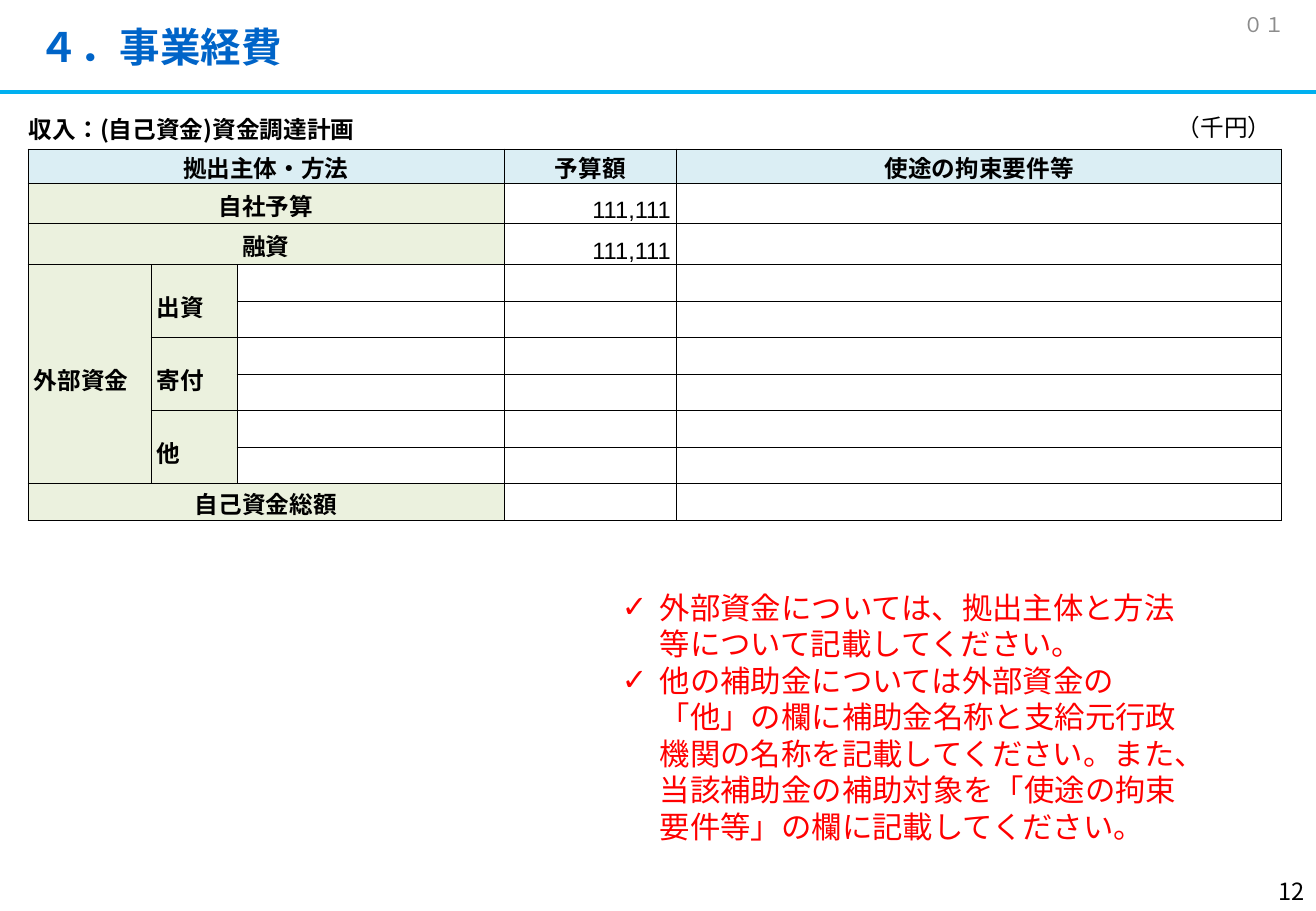
from dataclasses import dataclass

from lxml import etree
from pptx import Presentation
from pptx.dml.color import RGBColor
from pptx.enum.lang import MSO_LANGUAGE_ID
from pptx.enum.shapes import MSO_CONNECTOR
from pptx.enum.text import MSO_ANCHOR, PP_ALIGN
from pptx.oxml import parse_xml
from pptx.oxml.ns import nsdecls, qn
from pptx.util import Pt

LEFT, CENTER, RIGHT, JUSTIFY = PP_ALIGN.LEFT, PP_ALIGN.CENTER, PP_ALIGN.RIGHT, PP_ALIGN.JUSTIFY
TOP, MIDDLE = MSO_ANCHOR.TOP, MSO_ANCHOR.MIDDLE
JAPANESE = MSO_LANGUAGE_ID.JAPANESE
STRAIGHT = MSO_CONNECTOR.STRAIGHT
PX = 7526


@dataclass(frozen=True)
class Theme:
    title: str = "0064C8"
    rule: str = "00B0F0"
    ink: str = "000000"
    muted: str = "8C8C8C"
    alert: str = "FF0000"
    header: str = "DBEEF4"
    label: str = "EBF1DE"
    paper: str = "FFFFFF"
    font: str = "Noto Sans CJK JP"
    table_font: str = "Arial"
    title_size: int = 24
    note_size: int = 18
    body_size: int = 14
    small_size: int = 12


theme = Theme()


def add_span(para, text, size, color, bold=False, font=theme.font):
    span = para.add_run()
    span.text = text
    span.font.size = Pt(size)
    span.font.bold = bold
    span.font.color.rgb = RGBColor.from_string(color)
    span.font.name = font
    span.font.language_id = JAPANESE
    east_asian = etree.SubElement(span.font._element, qn("a:ea"))
    east_asian.set("typeface", font)


def add_box(left, top, width, height, anchor=TOP):
    box = page.shapes.add_textbox(left * PX, top * PX, width * PX, height * PX)
    box.text_frame.word_wrap = True
    box.text_frame.vertical_anchor = anchor
    return box.text_frame


deck = Presentation()
deck.slide_width, deck.slide_height = 1316 * PX, 911 * PX
page = deck.slides.add_slide(deck.slide_layouts[6])

# Rule under the title
rule = page.shapes.add_connector(STRAIGHT, 0, 92 * PX, 1316 * PX, 92 * PX)
rule.line.color.rgb = RGBColor.from_string(theme.rule)
rule.line.width = Pt(2.25)
etree.SubElement(rule._element.spPr, qn("a:effectLst"))

# Single-line texts: place, anchor, alignment, wording, size, colour, bold
lines = [
    ((27, 16, 1264, 61), MIDDLE, LEFT, "４．事業経費", theme.title_size, theme.title, True),
    ((17, 109, 452, 41), TOP, LEFT, "収入：(自己資金)資金調達計画", theme.body_size, theme.ink, True),
    ((1165, 107, 137, 41), TOP, LEFT, "（千円）", theme.body_size, theme.ink, False),
    ((1232, 0, 84, 49), MIDDLE, LEFT, "０１", theme.small_size, theme.muted, False),
    ((1011, 867, 306, 49), MIDDLE, RIGHT, "12", theme.body_size, theme.ink, False),
]
for place, anchor, align, text, size, color, bold in lines:
    para = add_box(*place, anchor).paragraphs[0]
    para.alignment = align
    add_span(para, text, size, color, bold)

# Funding table
column_widths = [123, 86, 267, 173, 605]
row_heights = [34, 40, 41, 34, 35, 34, 35, 34, 35, 34]
frame = page.shapes.add_table(len(row_heights), len(column_widths), 28 * PX, 149 * PX,
                              sum(column_widths) * PX, sum(row_heights) * PX)
table = frame.table
table.first_row = table.horz_banding = False
for column, width in zip(table.columns, column_widths):
    column.width = width * PX
for row, height in zip(table.rows, row_heights):
    row.height = height * PX

# (row, column): wording, alignment, line pitch in points, fill, bold
entries = {
    (0, 0): ("拠出主体・方法", CENTER, 20, theme.header, True),
    (0, 3): ("予算額", CENTER, 20, theme.header, True),
    (0, 4): ("使途の拘束要件等", CENTER, 20, theme.header, True),
    (1, 0): ("自社予算", CENTER, 20, theme.label, True),
    (1, 3): ("111,111", RIGHT, 24, theme.paper, False),
    (2, 0): ("融資", CENTER, 20, theme.label, True),
    (2, 3): ("111,111", RIGHT, 24, theme.paper, False),
    (3, 0): ("外部資金", JUSTIFY, 24, theme.label, True),
    (3, 1): ("出資", JUSTIFY, 24, theme.label, True),
    (5, 1): ("寄付", JUSTIFY, 24, theme.label, True),
    (7, 1): ("他", JUSTIFY, 24, theme.label, True),
    (9, 0): ("自己資金総額", CENTER, 20, theme.label, True),
}
empty_entry = ("", LEFT, 20, theme.paper, False)
for r in range(len(row_heights)):
    for c in range(len(column_widths)):
        text, align, pitch, fill, bold = entries.get((r, c), empty_entry)
        cell = table.cell(r, c)
        cell.margin_left = cell.margin_right = 6 * PX
        cell.margin_top = cell.margin_bottom = 0
        cell.vertical_anchor = MIDDLE
        properties = cell._tc.get_or_add_tcPr()
        for side in ("lnL", "lnR", "lnT", "lnB"):
            properties.append(parse_xml(
                f'<a:{side} {nsdecls("a")} w="{Pt(0.5)}"><a:solidFill>'
                f'<a:srgbClr val="{theme.ink}"/></a:solidFill></a:{side}>'))
        cell.fill.solid()
        cell.fill.fore_color.rgb = RGBColor.from_string(fill)
        para = cell.text_frame.paragraphs[0]
        para.alignment = align
        para.line_spacing = Pt(pitch)
        if text:
            add_span(para, text, theme.body_size, theme.ink, bold, theme.table_font)

for r in (0, 1, 2, 9):
    table.cell(r, 0).merge(table.cell(r, 2))
table.cell(3, 0).merge(table.cell(8, 0))
for r in (3, 5, 7):
    table.cell(r, 1).merge(table.cell(r + 1, 1))

# Guidance notes
notes = [
    "外部資金については、拠出主体と方法等について記載してください。",
    "他の補助金については外部資金の「他」の欄に補助金名称と支給元行政機関の名称を記載してください。"
    "また、当該補助金の補助対象を「使途の拘束要件等」の欄に記載してください。",
]
guidance = add_box(610, 583, 583, 270)
for i, note in enumerate(notes):
    para = guidance.add_paragraph() if i else guidance.paragraphs[0]
    properties = para._p.get_or_add_pPr()
    properties.set("marL", str(38 * PX))
    properties.set("indent", str(-38 * PX))
    etree.SubElement(properties, qn("a:buFont")).set("typeface", theme.table_font)
    etree.SubElement(properties, qn("a:buChar")).set("char", "✓")
    add_span(para, note, theme.note_size, theme.alert)

deck.save("out.pptx")
